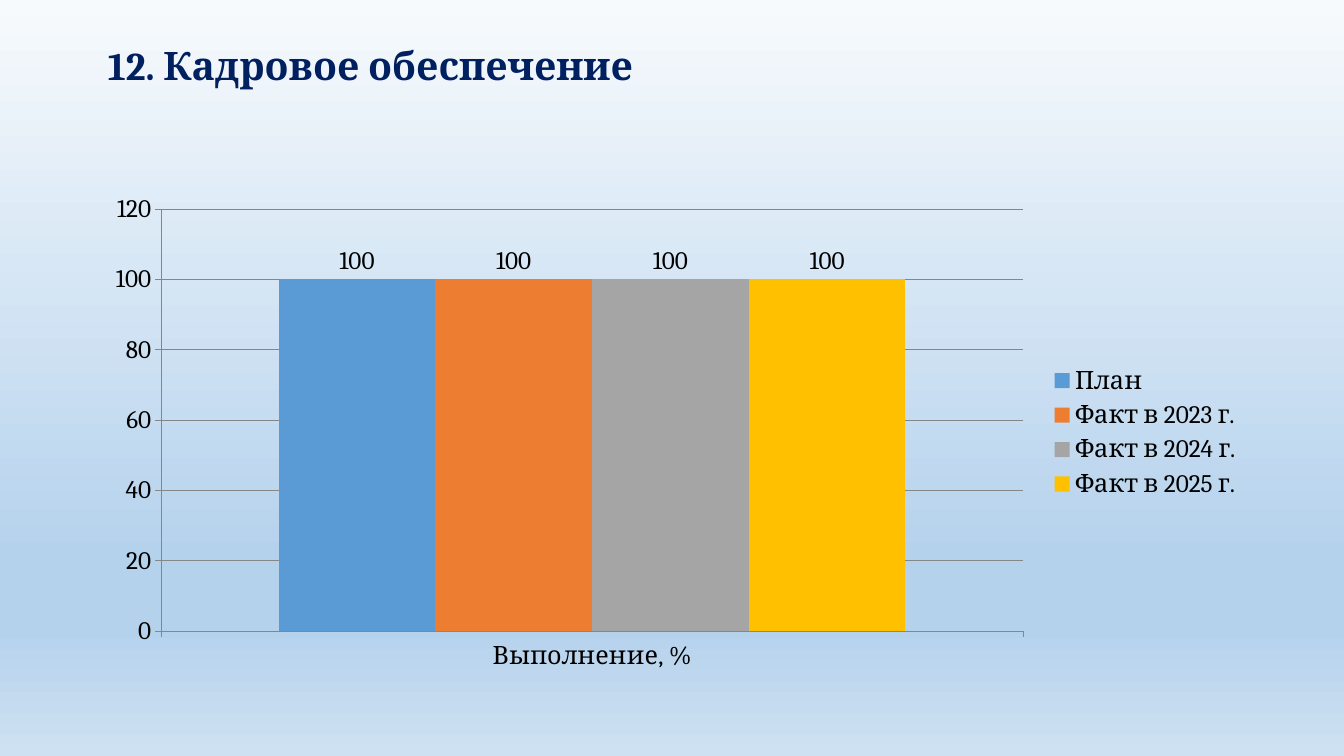
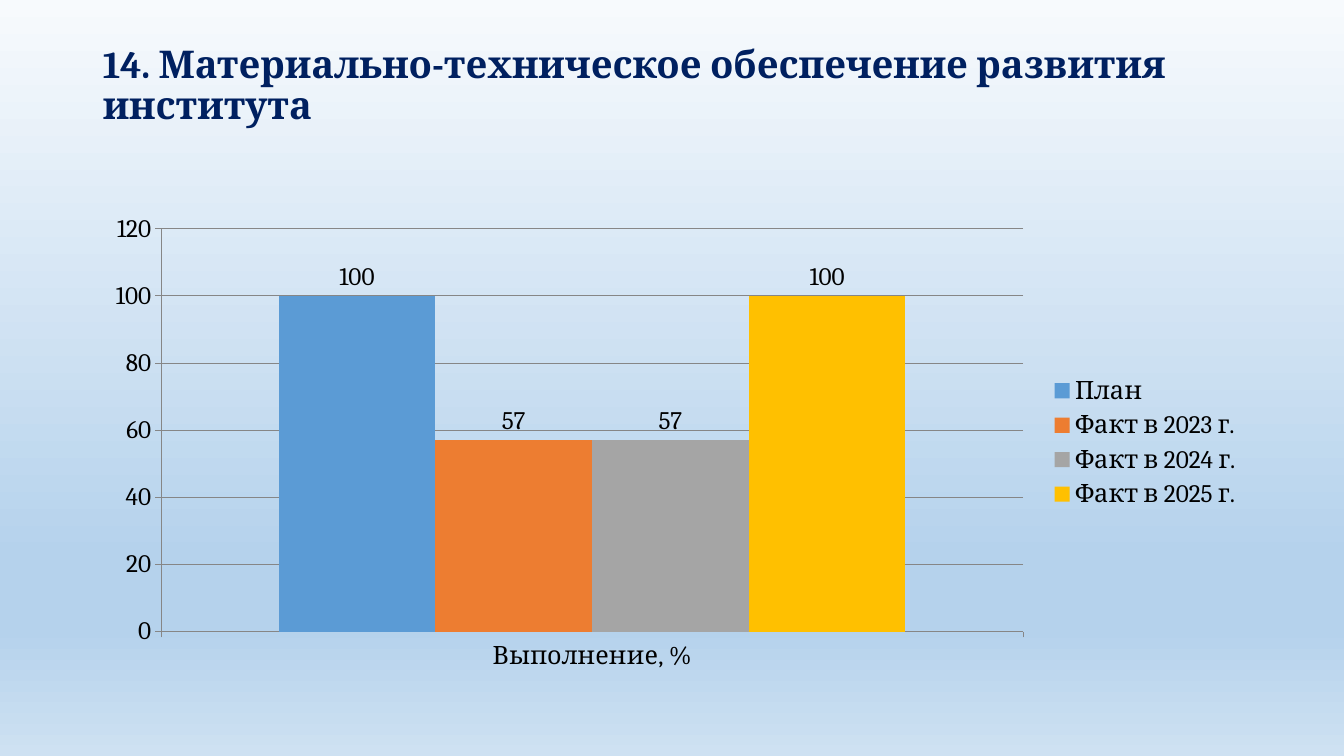
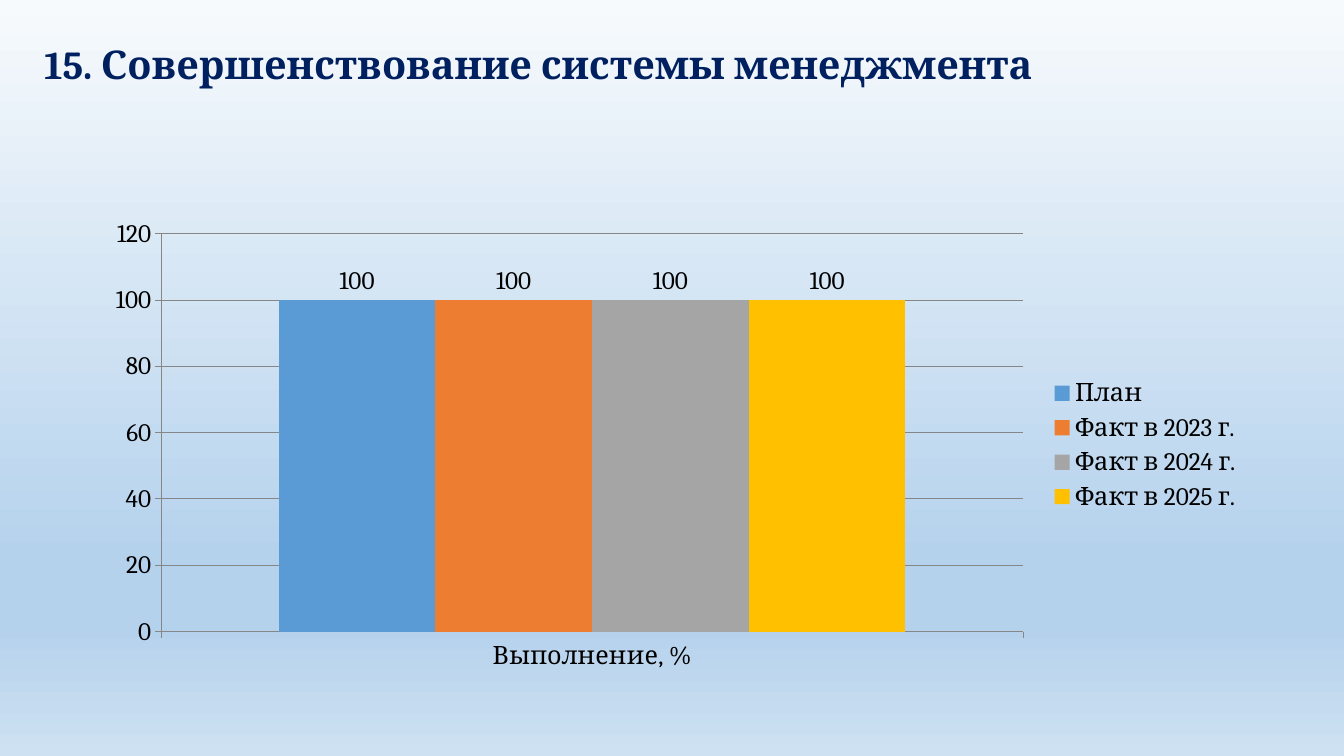
from dataclasses import dataclass

from lxml import etree
from pptx import Presentation
from pptx.chart.data import CategoryChartData
from pptx.dml.color import RGBColor
from pptx.enum.chart import XL_CHART_TYPE, XL_LABEL_POSITION, XL_LEGEND_POSITION, XL_TICK_MARK
from pptx.enum.text import MSO_ANCHOR, MSO_AUTO_SIZE, PP_ALIGN
from pptx.oxml.ns import qn
from pptx.util import Inches, Pt

COLUMNS = XL_CHART_TYPE.COLUMN_CLUSTERED
ABOVE_BAR = XL_LABEL_POSITION.OUTSIDE_END
LEGEND_RIGHT = XL_LEGEND_POSITION.RIGHT
TICK_OUT, TICK_NONE = XL_TICK_MARK.OUTSIDE, XL_TICK_MARK.NONE
TITLE_ONLY = 5


@dataclass(frozen=True)
class Theme:
    font: str = "Cambria"
    title_color: str = "002060"
    text_color: str = "000000"
    axis_color: str = "868686"
    chart_size: float = 18
    axis_width: float = 0.75
    background: tuple = ((0, "F7FAFD"), (74, "B5D2EC"), (83, "B5D2EC"), (100, "CEE1F2"))
    series: tuple = ("5B9BD5", "ED7D31", "A5A5A5", "FFC000")


SERIES_NAMES = ("План", "Факт в 2023 г.", "Факт в 2024 г.", "Факт в 2025 г.")
CATEGORY = "Выполнение, %"
CHART_LEFT, CHART_WIDTH, CHART_BOTTOM = 0.92, 11.5, 6.75

PAGES = (
    dict(title="12. Кадровое обеспечение", title_size=28,
         title_area=(0.97, 0.41, 11.5, 0.64), chart_top=1.83, values=(100, 100, 100, 100)),
    dict(title="14. Материально-техническое обеспечение развития института", title_size=27.3,
         title_area=(0.92, 0.4, 11.5, 1.91), chart_top=2.03, values=(100, 57, 57, 100)),
    dict(title="15. Совершенствование системы менеджмента", title_size=28.3,
         title_area=(0.34, 0.4, 12.76, 1.91), chart_top=2.08, values=(100, 100, 100, 100)),
)


def apply(target, **values):
    for name, value in values.items():
        setattr(target, name, value)


class Deck:
    def __init__(self, theme):
        self.theme = theme
        self.presentation = Presentation()
        apply(self.presentation, slide_width=Inches(13.33), slide_height=Inches(7.5))
        self.page = None
        self.paint_background()

    def paint_background(self):
        """Give the slide master a gradient running from top to bottom."""
        master = self.presentation.slide_master
        master.background.fill.gradient()
        gradient = next(master.element.iter(qn("a:gradFill")))
        stops = gradient.find(qn("a:gsLst"))
        for stop in list(stops):
            stops.remove(stop)
        for percent, color in self.theme.background:
            stop = etree.SubElement(stops, qn("a:gs"), pos=str(percent * 1000))
            etree.SubElement(stop, qn("a:srgbClr"), val=color)
        direction = gradient.find(qn("a:lin"))
        direction.set("ang", str(90 * 60000))
        direction.set("scaled", "0")

    def add_page(self):
        layout = self.presentation.slide_layouts[TITLE_ONLY]
        self.page = self.presentation.slides.add_slide(layout)

    def format_font(self, font, size, color, bold=False):
        apply(font, name=self.theme.font, size=Pt(size), bold=bold)
        font.color.rgb = RGBColor.from_string(color)

    def add_title(self, text, size, area):
        title = self.page.shapes.title
        left, top, width, height = map(Inches, area)
        apply(title, left=left, top=top, width=width, height=height)
        frame = title.text_frame
        apply(frame, text=text, word_wrap=True, auto_size=MSO_AUTO_SIZE.NONE,
              vertical_anchor=MSO_ANCHOR.TOP)
        para = frame.paragraphs[0]
        apply(para, alignment=PP_ALIGN.LEFT, line_spacing=0.9)
        self.format_font(para.runs[0].font, size, self.theme.title_color, bold=True)

    def add_column_chart(self, top, values):
        data = CategoryChartData()
        data.categories = [CATEGORY]
        for name, value in zip(SERIES_NAMES, values):
            data.add_series(name, [value])
        chart = self.page.shapes.add_chart(
            COLUMNS, Inches(CHART_LEFT), Inches(top), Inches(CHART_WIDTH),
            Inches(CHART_BOTTOM - top), data).chart
        apply(chart, has_title=False, has_legend=True)
        apply(chart.legend, position=LEGEND_RIGHT, include_in_layout=False)
        self.format_font(chart.font, self.theme.chart_size, self.theme.text_color)
        self.format_axes(chart)
        self.format_columns(chart.plots[0])

    def format_axes(self, chart):
        value_axis, category_axis = chart.value_axis, chart.category_axis
        apply(value_axis, minimum_scale=0, maximum_scale=120, major_unit=20,
              has_major_gridlines=True)
        for axis in (value_axis, category_axis):
            apply(axis, major_tick_mark=TICK_OUT, minor_tick_mark=TICK_NONE)
        for part in (value_axis, category_axis, value_axis.major_gridlines):
            line = part.format.line
            line.width = Pt(self.theme.axis_width)
            line.color.rgb = RGBColor.from_string(self.theme.axis_color)

    def format_columns(self, plot):
        apply(plot, gap_width=150, overlap=0, vary_by_categories=False)
        for series, color in zip(plot.series, self.theme.series):
            series.format.fill.solid()
            series.format.fill.fore_color.rgb = RGBColor.from_string(color)
            apply(series.data_labels, show_value=True, position=ABOVE_BAR)


def main():
    deck = Deck(Theme())
    for page in PAGES:
        deck.add_page()
        deck.add_title(page["title"], page["title_size"], page["title_area"])
        deck.add_column_chart(page["chart_top"], page["values"])
    deck.presentation.save("out.pptx")


if __name__ == "__main__":
    main()
